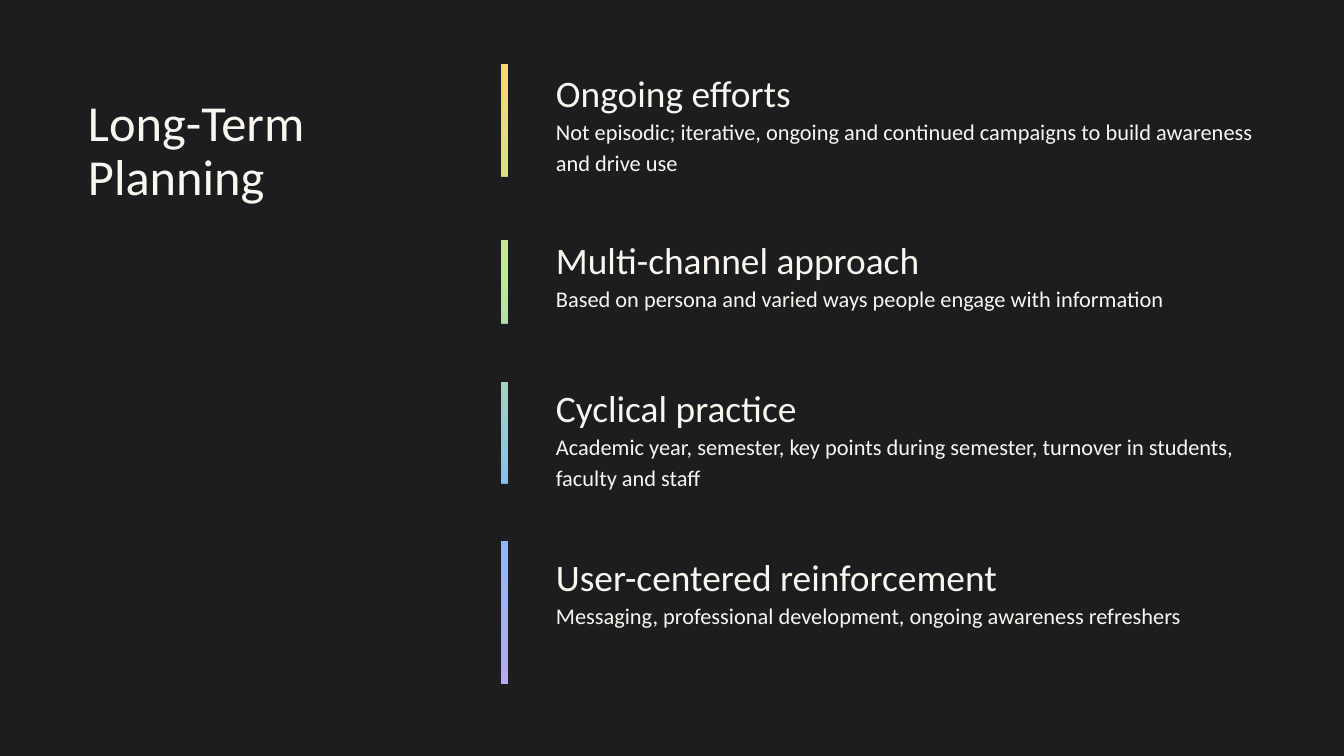
import lxml.etree
import pptx
import pptx.dml.color
import pptx.enum.dml
import pptx.enum.shapes
import pptx.enum.text
import pptx.oxml.ns
import pptx.util
from dataclasses import dataclass

EMU_PER_PX = 914400 / 134.4


@dataclass(frozen=True)
class Theme:
    font: str = "Calibri"
    background: str = "1D1D1F"
    text: str = "FAF6F0"
    title_size: int = 27
    heading_size: int = 20
    body_size: int = 12
    # Gradient stops as (percent, colour), from top to bottom
    stops: tuple = ((0, "FBD572"), (34, "BDEC90"), (71, "82BCF6"), (100, "B6ABF7"))


THEME = Theme()

# (top, width, heading, detail) of each point
POINTS = [
    (0, 723, "Ongoing efforts",
     "Not episodic; iterative, ongoing and continued campaigns to build awareness and drive use"),
    (167, 728, "Multi-channel approach",
     "Based on persona and varied ways people engage with information"),
    (315, 728, "Cyclical practice",
     "Academic year, semester, key points during semester, turnover in students, faculty and staff"),
    (484, 728, "User-centered reinforcement",
     "Messaging, professional development, ongoing awareness refreshers"),
]
POINT_HEIGHT = 128

# (left, top, height) of each gap, relative to the bar
GAPS = [(-43, 113, 63), (-33, 260, 58), (-41, 420, 57)]
GAP_WIDTH = 90


def px(length):
    return pptx.util.Emu(round(length * EMU_PER_PX))


def rgb(color):
    return pptx.dml.color.RGBColor.from_string(color)


def apply(target, values):
    for name, value in values.items():
        setattr(target, name, value)


def place(shape, box):
    apply(shape, dict(zip(("left", "top", "width", "height"), map(px, box))))


def write(paragraph, text, size, line_spacing):
    run = paragraph.add_run()
    run.text = text
    apply(run.font, {"name": THEME.font, "size": pptx.util.Pt(size)})
    run.font.color.rgb = rgb(THEME.text)
    apply(paragraph, {"line_spacing": line_spacing,
                      "alignment": pptx.enum.text.PP_ALIGN.LEFT})


def add_rectangle(slide, box):
    shape = slide.shapes.add_shape(
        pptx.enum.shapes.MSO_SHAPE.RECTANGLE, *map(px, box))
    shape.shadow.inherit = False
    shape.line.fill.background()
    return shape


def add_title(slide, box):
    title = slide.shapes.title
    place(title, box)
    apply(title.text_frame, {
        "word_wrap": True,
        "auto_size": pptx.enum.text.MSO_AUTO_SIZE.NONE,
        "vertical_anchor": pptx.enum.text.MSO_ANCHOR.MIDDLE,
        "margin_left": px(10), "margin_right": px(10),
        "margin_top": px(5), "margin_bottom": px(5),
    })
    write(title.text_frame.paragraphs[0], "Long-Term Planning", THEME.title_size, 0.9)


def add_points(slide, left, top):
    for offset, width, heading, detail in POINTS:
        box = (left, top + offset, width, POINT_HEIGHT)
        frame = slide.shapes.add_textbox(*map(px, box)).text_frame
        apply(frame, {"word_wrap": True, "margin_left": 0, "margin_top": 0,
                      "margin_right": px(13), "margin_bottom": 0})
        lines = [
            (frame.paragraphs[0], heading, THEME.heading_size),
            (frame.add_paragraph(), detail, THEME.body_size),
        ]
        for paragraph, text, size in lines:
            write(paragraph, text, size, 1.15)
            paragraph._p.get_or_add_pPr().set("marL", str(px(5)))


def add_gradient_bar(slide, left, top, width, height):
    bar = add_rectangle(slide, (left, top, width, height))
    bar.fill.gradient()
    bar.fill.gradient_angle = 270

    # Replace the two default stops with the theme's stops
    qn = pptx.oxml.ns.qn
    stop_list = bar._element.spPr.find(qn("a:gradFill")).find(qn("a:gsLst"))
    for stop in list(stop_list):
        stop_list.remove(stop)
    for percent, color in THEME.stops:
        stop = lxml.etree.SubElement(stop_list, qn("a:gs"), pos=str(percent * 1000))
        lxml.etree.SubElement(stop, qn("a:srgbClr"), val=color)

    # Background blocks split the bar into one segment per point
    for gap_left, gap_top, gap_height in GAPS:
        gap = add_rectangle(slide, (left + gap_left, top + gap_top, GAP_WIDTH, gap_height))
        gap.fill.solid()
        gap.fill.fore_color.rgb = rgb(THEME.background)


def add_planning_slide(presentation):
    slide = presentation.slides.add_slide(presentation.slide_layouts[5])
    slide.background.fill.solid()
    slide.background.fill.fore_color.rgb = rgb(THEME.background)
    add_title(slide, (78, 99, 339, 106))
    add_points(slide, 551, 63)
    add_gradient_bar(slide, 501, 64, 7, 620)


def main():
    presentation = pptx.Presentation()
    apply(presentation, {"slide_width": px(1344), "slide_height": px(756)})
    add_planning_slide(presentation)
    presentation.save("out.pptx")


if __name__ == "__main__":
    main()
